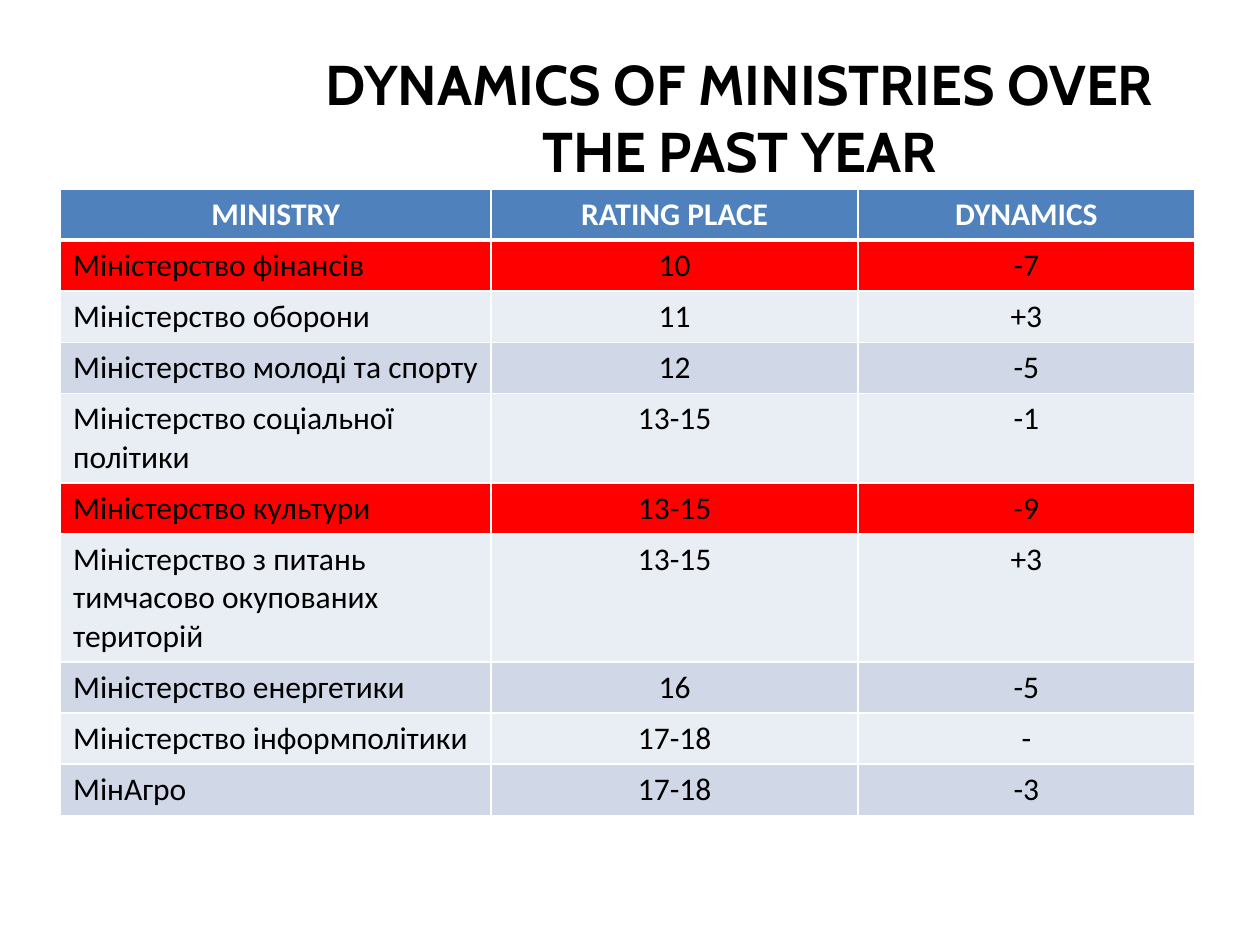
from dataclasses import dataclass
from typing import Any

from lxml import etree
from pptx import Presentation
from pptx.dml.color import RGBColor
from pptx.enum.text import MSO_ANCHOR, PP_ALIGN
from pptx.oxml.ns import qn
from pptx.util import Cm, Pt

LEFT = PP_ALIGN.LEFT
CENTER = PP_ALIGN.CENTER
MIDDLE = MSO_ANCHOR.MIDDLE
TITLE_ONLY = 5

HEADERS = ["MINISTRY", "RATING PLACE", "DYNAMICS"]
MINISTRIES = [
    ("Міністерство фінансів", "10", "-7"),
    ("Міністерство оборони", "11", "+3"),
    ("Міністерство молоді та спорту", "12", "-5"),
    ("Міністерство соціальної політики", "13-15", "-1"),
    ("Міністерство культури", "13-15", "-9"),
    ("Міністерство з питань тимчасово окупованих територій", "13-15", "+3"),
    ("Міністерство енергетики", "16", "-5"),
    ("Міністерство інформполітики", "17-18", "-"),
    ("МінАгро", "17-18", "-3"),
]
SHARPEST_FALLS = {"-7", "-9"}
COLUMN_WIDTHS = [8.68, 7.4, 6.78]
ROW_HEIGHT = 1.03


def color(value):
    return RGBColor.from_string(value)


def write_text(frame, text, font="Calibri", size=18, fill="000000", bold=False, align=LEFT):
    paragraph = frame.paragraphs[0]
    paragraph.alignment = align
    run = paragraph.add_run()
    run.text = text
    run.font.name = font
    run.font.size = Pt(size)
    run.font.bold = bold
    run.font.color.rgb = color(fill)


def set_borders(cell, fill, bottom_width):
    properties = cell._tc.get_or_add_tcPr()
    for side, width in (("L", 1), ("R", 1), ("T", 1), ("B", bottom_width)):
        line = etree.SubElement(properties, qn(f"a:ln{side}"), w=str(Pt(width)))
        solid = etree.SubElement(line, qn("a:solidFill"))
        etree.SubElement(solid, qn("a:srgbClr"), val=fill)


@dataclass
class RatingSlide:
    slide: Any
    header: str = "4F81BD"
    alert: str = "FF0000"
    bands: tuple = ("E9EDF4", "D0D8E8")
    white: str = "FFFFFF"
    title_font: str = "Cabin"

    def add_title(self, text, left, top, width, height):
        title = self.slide.shapes.title
        title.left, title.top = Cm(left), Cm(top)
        title.width, title.height = Cm(width), Cm(height)
        frame = title.text_frame
        frame.word_wrap = True
        frame.vertical_anchor = MIDDLE
        write_text(frame, text, font=self.title_font, size=32, bold=True, align=CENTER)

    def row_fill(self, index, dynamics):
        if index == 0:
            return self.header
        if dynamics in SHARPEST_FALLS:
            return self.alert
        return self.bands[index % 2]

    def add_table(self, rows, left, top):
        frame = self.slide.shapes.add_table(
            len(rows), len(COLUMN_WIDTHS), Cm(left), Cm(top),
            Cm(sum(COLUMN_WIDTHS)), Cm(ROW_HEIGHT * len(rows)),
        )
        table = frame.table
        table.horz_banding = False
        for column, width in zip(table.columns, COLUMN_WIDTHS):
            column.width = Cm(width)
        for row_index, values in enumerate(rows):
            is_header = row_index == 0
            table.rows[row_index].height = Cm(ROW_HEIGHT)
            fill = self.row_fill(row_index, values[-1])
            for column_index, value in enumerate(values):
                cell = table.cell(row_index, column_index)
                set_borders(cell, self.white, 3 if is_header else 1)
                cell.fill.solid()
                cell.fill.fore_color.rgb = color(fill)
                write_text(
                    cell.text_frame, value,
                    fill=self.white if is_header else "000000",
                    bold=is_header,
                    align=CENTER if is_header or column_index else LEFT,
                )


def main():
    presentation = Presentation()
    presentation.slide_width = Cm(25.4)
    presentation.slide_height = Cm(19.05)
    slide = presentation.slides.add_slide(presentation.slide_layouts[TITLE_ONLY])
    rating = RatingSlide(slide)
    rating.add_title("DYNAMICS OF MINISTRIES OVER THE PAST YEAR", 5.69, 0.76, 18.44, 3.18)
    rating.add_table([HEADERS, *MINISTRIES], 1.22, 3.81)
    presentation.save("out.pptx")


if __name__ == "__main__":
    main()
